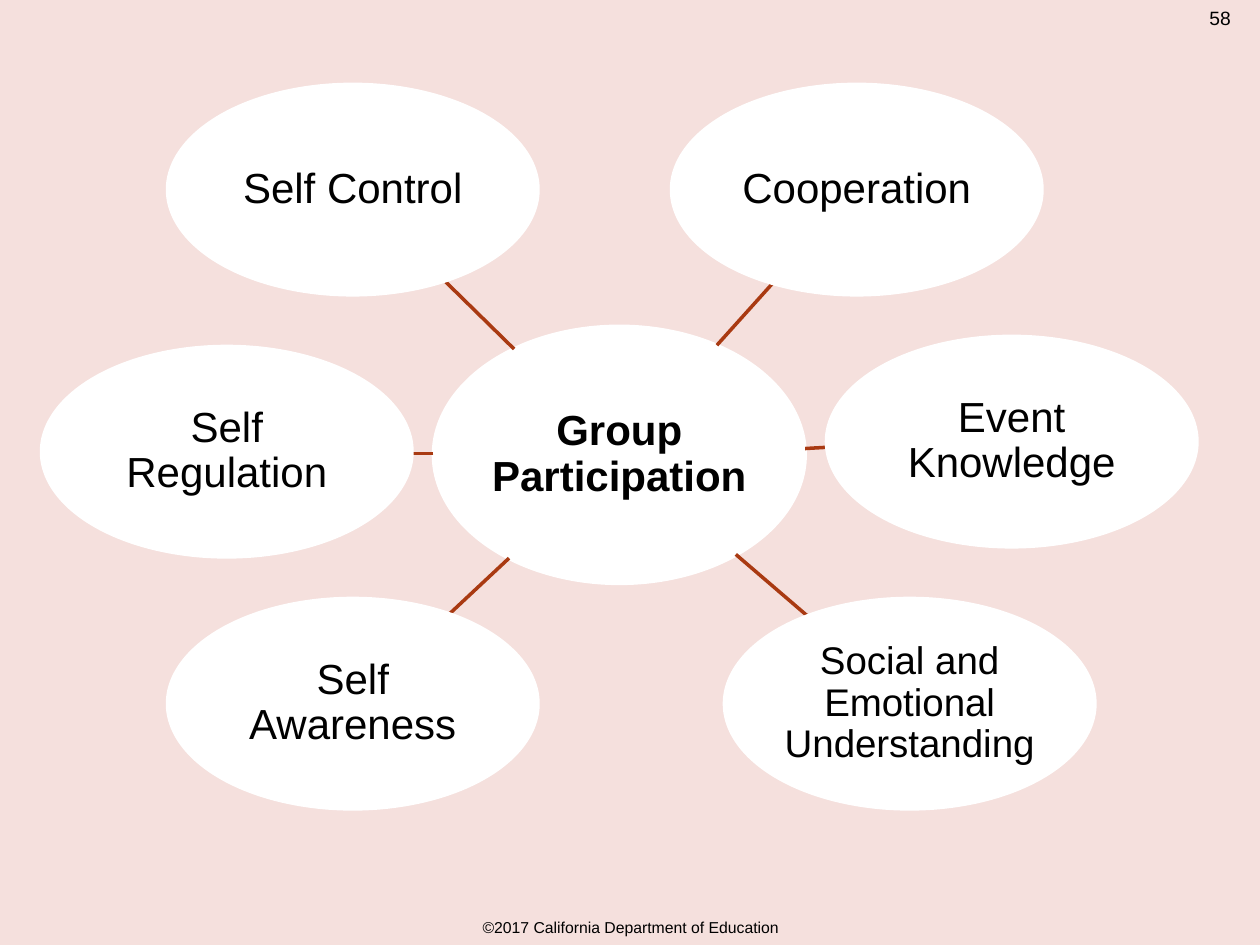
from dataclasses import dataclass

from lxml import etree
from pptx import Presentation
from pptx.dml.color import RGBColor
from pptx.enum import shapes, text
from pptx.oxml import ns
from pptx.util import Inches, Pt

BACKGROUND = RGBColor(0xF5, 0xE0, 0xDD)
WHITE = RGBColor(0xFF, 0xFF, 0xFF)
BLACK = RGBColor(0x00, 0x00, 0x00)
RUST = RGBColor(0xA9, 0x3A, 0x12)
FONT = "Arial"
LINE_WIDTH = Pt(2)


@dataclass
class Bubble:
    label: str
    left: float
    top: float
    width: float = 2.94
    height: float = 1.67
    size: int = 24
    bold: bool = False


@dataclass
class Spoke:
    start: tuple[float, float]
    end: tuple[float, float]


HUB = Bubble("Group Participation", 3.44, 2.59, 2.95, 2.04, bold=True)
SKILLS = [
    Bubble("Cooperation", 5.33, 0.67),
    Bubble("Event Knowledge", 6.56, 2.67),
    Bubble("Social and Emotional Understanding", 5.75, 4.75, size=22),
    Bubble("Self Awareness", 1.33, 4.75),
    Bubble("Self Regulation", 0.33, 2.75),
    Bubble("Self Control", 1.33, 0.67),
]
SPOKES = [
    Spoke((5.69, 2.74), (6.14, 2.24)),
    Spoke((6.39, 3.56), (6.56, 3.55)),
    Spoke((5.84, 4.4), (6.41, 4.89)),
    Spoke((4.04, 4.43), (3.57, 4.87)),
    Spoke((3.44, 3.6), (3.28, 3.6)),
    Spoke((4.08, 2.77), (3.53, 2.23)),
]


def write(frame, words: str, size: int, align, anchor, bold: bool = False) -> None:
    frame.word_wrap = True
    frame.vertical_anchor = anchor
    para = frame.paragraphs[0]
    para.text = words
    para.alignment = align
    para.font.name = FONT
    para.font.size = Pt(size)
    para.font.bold = bold
    para.font.color.rgb = BLACK


def add_bubble(page, bubble: Bubble) -> None:
    oval = page.shapes.add_shape(
        shapes.MSO_SHAPE.OVAL, Inches(bubble.left), Inches(bubble.top),
        Inches(bubble.width), Inches(bubble.height))
    oval.shadow.inherit = False
    oval.fill.solid()
    oval.fill.fore_color.rgb = WHITE
    oval.line.color.rgb = WHITE
    oval.line.width = LINE_WIDTH
    frame = oval.text_frame
    frame.margin_left = frame.margin_right = Inches(0.02)
    frame.margin_top = frame.margin_bottom = Inches(0.02)
    write(frame, bubble.label, bubble.size, text.PP_ALIGN.CENTER,
          text.MSO_ANCHOR.MIDDLE, bubble.bold)
    frame.paragraphs[0].line_spacing = 0.9


def add_spoke(page, spoke: Spoke) -> None:
    ends = [Inches(value) for value in spoke.start + spoke.end]
    line = page.shapes.add_connector(shapes.MSO_CONNECTOR.STRAIGHT, *ends)
    line.line.color.rgb = RUST
    line.line.width = LINE_WIDTH
    etree.SubElement(line._element.spPr, ns.qn("a:effectLst"))


def add_label(page, words: str, left: float, top: float, width: float,
              height: float, size: int, align, anchor) -> None:
    box = page.shapes.add_textbox(
        Inches(left), Inches(top), Inches(width), Inches(height))
    write(box.text_frame, words, size, align, anchor)


def main() -> None:
    deck = Presentation()
    deck.slide_width, deck.slide_height = Inches(10), Inches(7.5)
    page = deck.slides.add_slide(deck.slide_layouts[6])
    page.background.fill.solid()
    page.background.fill.fore_color.rgb = BACKGROUND

    # Hub with its surrounding skills
    add_bubble(page, HUB)
    for spoke, skill in zip(SPOKES, SKILLS):
        add_spoke(page, spoke)
        add_bubble(page, skill)

    # Footer and page number
    add_label(page, "©2017 California Department of Education",
              0.38, 7.23, 9.25, 0.25, 9,
              text.PP_ALIGN.CENTER, text.MSO_ANCHOR.MIDDLE)
    add_label(page, "58", 9.5, 0, 0.5, 0.4, 11,
              text.PP_ALIGN.LEFT, text.MSO_ANCHOR.TOP)

    deck.save("out.pptx")


if __name__ == "__main__":
    main()
